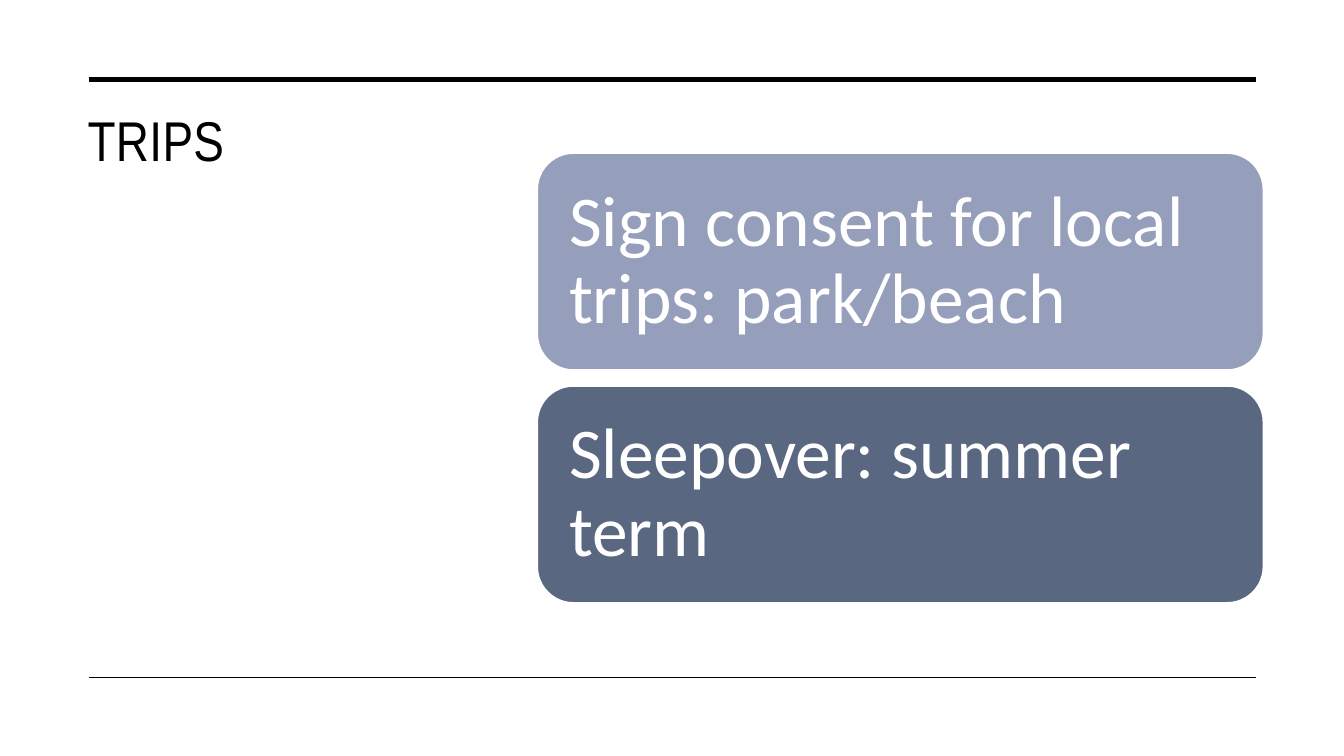
from dataclasses import dataclass

from lxml import etree
from pptx import Presentation
from pptx.dml.color import RGBColor
from pptx.enum.shapes import MSO_CONNECTOR, MSO_SHAPE
from pptx.enum.text import MSO_ANCHOR, PP_ALIGN
from pptx.oxml.ns import qn
from pptx.util import Inches, Pt

STRAIGHT = MSO_CONNECTOR.STRAIGHT
ROUNDED = MSO_SHAPE.ROUNDED_RECTANGLE
TOP, MIDDLE = MSO_ANCHOR.TOP, MSO_ANCHOR.MIDDLE
LEFT = PP_ALIGN.LEFT


@dataclass(frozen=True)
class Theme:
    """Colours, fonts and sizes of the slide."""
    ink: str = "000000"
    paper: str = "FFFFFF"
    cards: tuple = ("959EBB", "596781")
    title_font: str = "Arial Narrow"
    card_font: str = "Calibri"
    title_size: float = 40
    card_size: float = 51
    thick: float = 3.5
    thin: float = 1


@dataclass(frozen=True)
class Box:
    """A region in inches."""
    left: float
    top: float
    width: float
    height: float

    def emu(self):
        """Return the region as slide lengths."""
        return [Inches(v) for v in (self.left, self.top, self.width, self.height)]


THEME = Theme()
PAGE = Box(0, 0, 13.33, 7.5)
FRAME = Box(0.88, 0.79, 11.58, 5.93)
TITLE = Box(0.77, 1, 4, 4.82)
CARDS = Box(5.33, 1.52, 7.2, 4.46)
CARD_GAP = 0.16
CARD_INSET = 0.21


def write(frame, text, font, size, colour):
    """Fill a text frame with one left-aligned run and return its paragraph and run."""
    frame.word_wrap = True
    para = frame.paragraphs[0]
    para.alignment = LEFT
    span = para.add_run()
    span.text = text
    span.font.name = font
    span.font.size = Pt(size)
    span.font.color.rgb = RGBColor.from_string(colour)
    return para, span


def add_rules(page, box):
    """Draw a thick rule on the top edge of the box and a thin one on the bottom."""
    for y, weight in ((box.top, THEME.thick), (box.top + box.height, THEME.thin)):
        rule = page.shapes.add_connector(
            STRAIGHT, Inches(box.left), Inches(y), Inches(box.left + box.width), Inches(y))
        rule.line.width = Pt(weight)
        rule.line.color.rgb = RGBColor.from_string(THEME.ink)
        etree.SubElement(rule._element.spPr, qn("a:effectLst"))


def add_title(page, box, text):
    """Place the slide title at the top of the box."""
    frame = page.shapes.add_textbox(*box.emu()).text_frame
    frame.vertical_anchor = TOP
    _, span = write(frame, text, THEME.title_font, THEME.title_size, THEME.ink)
    span.font._element.set("spc", "30")


def add_cards(page, box, texts):
    """Stack equal rounded cards down the box."""
    height = (box.height - CARD_GAP * (len(texts) - 1)) / len(texts)
    for row, (text, fill) in enumerate(zip(texts, THEME.cards)):
        place = Box(box.left, box.top + row * (height + CARD_GAP), box.width, height)
        card = page.shapes.add_shape(ROUNDED, *place.emu())
        card.shadow.inherit = False
        card.fill.solid()
        card.fill.fore_color.rgb = RGBColor.from_string(fill)
        card.line.color.rgb = RGBColor.from_string(THEME.paper)
        card.line.width = Pt(THEME.thin)
        frame = card.text_frame
        frame.vertical_anchor = MIDDLE
        frame.margin_left = frame.margin_right = Inches(CARD_INSET)
        frame.margin_top = frame.margin_bottom = Inches(CARD_INSET)
        para, _ = write(frame, text, THEME.card_font, THEME.card_size, THEME.paper)
        para.line_spacing = 0.9


def main():
    """Build and save the deck."""
    deck = Presentation()
    deck.slide_width, deck.slide_height = Inches(PAGE.width), Inches(PAGE.height)
    page = deck.slides.add_slide(deck.slide_layouts[6])
    add_title(page, TITLE, "TRIPS")
    add_rules(page, FRAME)
    add_cards(page, CARDS, ("Sign consent for local trips: park/beach",
                            "Sleepover: summer term"))
    deck.save("out.pptx")


if __name__ == "__main__":
    main()
